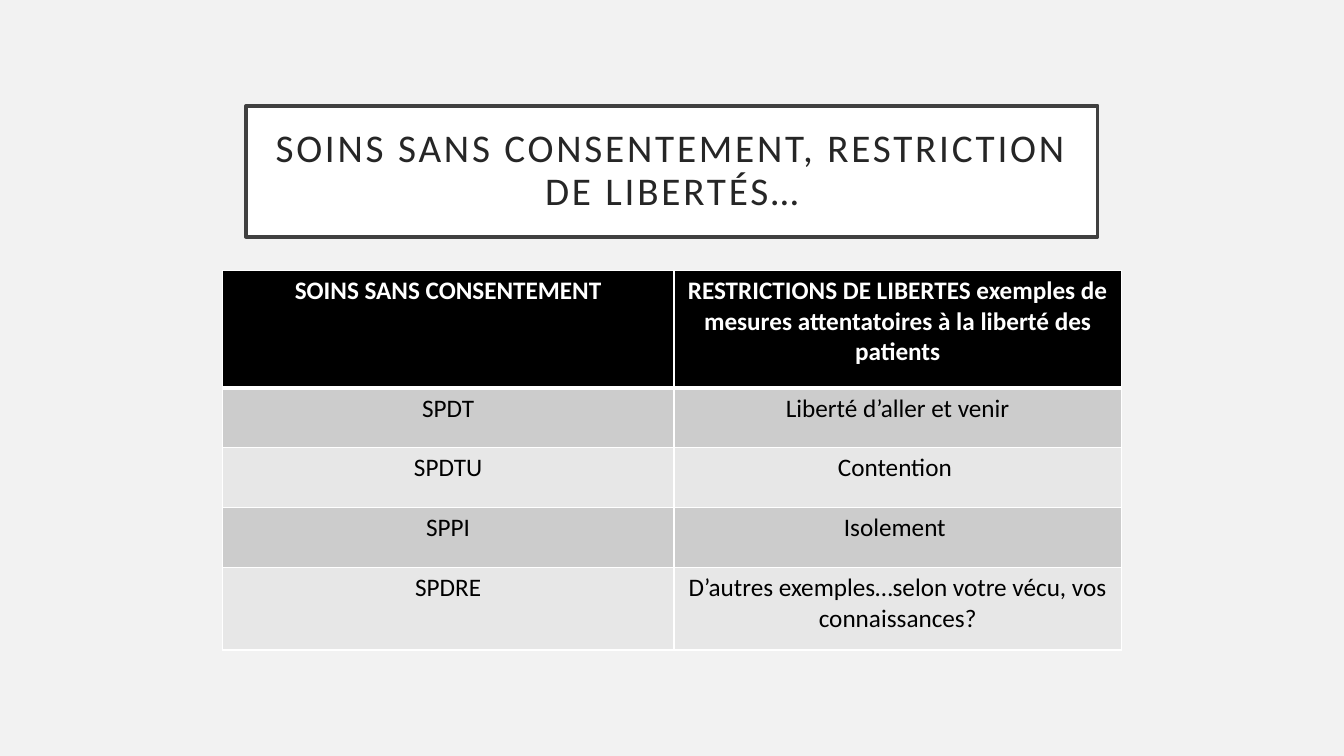
import pptx
import pptx.dml.color
import pptx.enum.text
import pptx.oxml
import pptx.oxml.ns
import pptx.util

Pt = pptx.util.Pt
CENTER = pptx.enum.text.PP_ALIGN.CENTER
MIDDLE = pptx.enum.text.MSO_ANCHOR.MIDDLE

COLORS = {
    "background": "F2F2F2",
    "white": "FFFFFF",
    "black": "000000",
    "frame": "404040",
    "title": "262626",
    "dark band": "CCCCCC",
    "light band": "E7E7E7",
}

TITLE = "SOINS SANS CONSENTEMENT, RESTRICTION DE LIBERTÉS…"
CARE_AND_RESTRICTIONS = [
    ("SOINS SANS CONSENTEMENT",
     "RESTRICTIONS DE LIBERTES exemples de mesures attentatoires à la liberté des patients"),
    ("SPDT", "Liberté d’aller et venir"),
    ("SPDTU", "Contention "),
    ("SPPI", "Isolement "),
    ("SPDRE", "D’autres exemples…selon votre vécu, vos connaissances?"),
]


def color(name):
    return pptx.dml.color.RGBColor.from_string(COLORS[name])


class SlideBuilder:
    font_name = "Calibri"

    def __init__(self, presentation):
        title_only = presentation.slide_layouts[5]
        self.slide = presentation.slides.add_slide(title_only)
        self.fill(self.slide.background, "background")

    def fill(self, target, name):
        target.fill.solid()
        target.fill.fore_color.rgb = color(name)

    def format_paragraph(self, paragraph, size, color_name, bold=False):
        paragraph.alignment = CENTER
        paragraph.font.name = self.font_name
        paragraph.font.size = Pt(size)
        paragraph.font.bold = bold
        paragraph.font.color.rgb = color(color_name)

    def title(self, text, left, top, width, height):
        shape = self.slide.shapes.title
        shape.left, shape.top = Pt(left), Pt(top)
        shape.width, shape.height = Pt(width), Pt(height)
        self.fill(shape, "white")
        shape.line.color.rgb = color("frame")
        shape.line.width = Pt(2.5)

        frame = shape.text_frame
        frame.word_wrap = True
        frame.auto_size = pptx.enum.text.MSO_AUTO_SIZE.NONE
        frame.vertical_anchor = MIDDLE
        frame.margin_left = frame.margin_right = Pt(14.4)
        frame.margin_top = frame.margin_bottom = Pt(14.4)

        paragraph = frame.paragraphs[0]
        run = paragraph.add_run()
        run.text = text
        run._r.get_or_add_rPr().set("spc", "200")
        self.format_paragraph(paragraph, 28, "title")
        paragraph.line_spacing = 0.9

    def cell_borders(self, cell, top_width, bottom_width):
        """Draw white borders; left and right are always 1 point."""
        properties = cell._tc.get_or_add_tcPr()
        widths = {"lnL": 1, "lnR": 1, "lnT": top_width, "lnB": bottom_width}
        for position, (tag, width) in enumerate(widths.items()):
            border = pptx.oxml.parse_xml(
                f'<a:{tag} {pptx.oxml.ns.nsdecls("a")} w="{Pt(width)}">'
                f'<a:solidFill><a:srgbClr val="{COLORS["white"]}"/></a:solidFill>'
                f'</a:{tag}>')
            properties.insert(position, border)

    def table(self, rows, left, top, column_widths, row_heights):
        table = self.slide.shapes.add_table(
            len(rows), len(column_widths), Pt(left), Pt(top),
            Pt(sum(column_widths)), Pt(sum(row_heights))).table
        for column, width in zip(table.columns, column_widths):
            column.width = Pt(width)
        for row_index, (texts, height) in enumerate(zip(rows, row_heights)):
            table.rows[row_index].height = Pt(height)
            is_header = row_index == 0
            band = "dark band" if row_index % 2 else "light band"
            for column_index, text in enumerate(texts):
                cell = table.cell(row_index, column_index)
                cell.text = text
                self.format_paragraph(cell.text_frame.paragraphs[0], 18,
                                      "white" if is_header else "black", is_header)
                self.fill(cell, "black" if is_header else band)
                self.cell_borders(cell, 3 if row_index == 1 else 1,
                                  3 if is_header else 1)


def main():
    presentation = pptx.Presentation()
    presentation.slide_width, presentation.slide_height = Pt(960), Pt(540)
    builder = SlideBuilder(presentation)
    builder.title(TITLE, 175.7, 75.6, 608.4, 93.6)
    builder.table(CARE_AND_RESTRICTIONS, 158.8, 193,
                  column_widths=[322.6, 319.7],
                  row_heights=[84.2, 42.7, 42.7, 42.7, 59])
    presentation.save("out.pptx")


if __name__ == "__main__":
    main()
